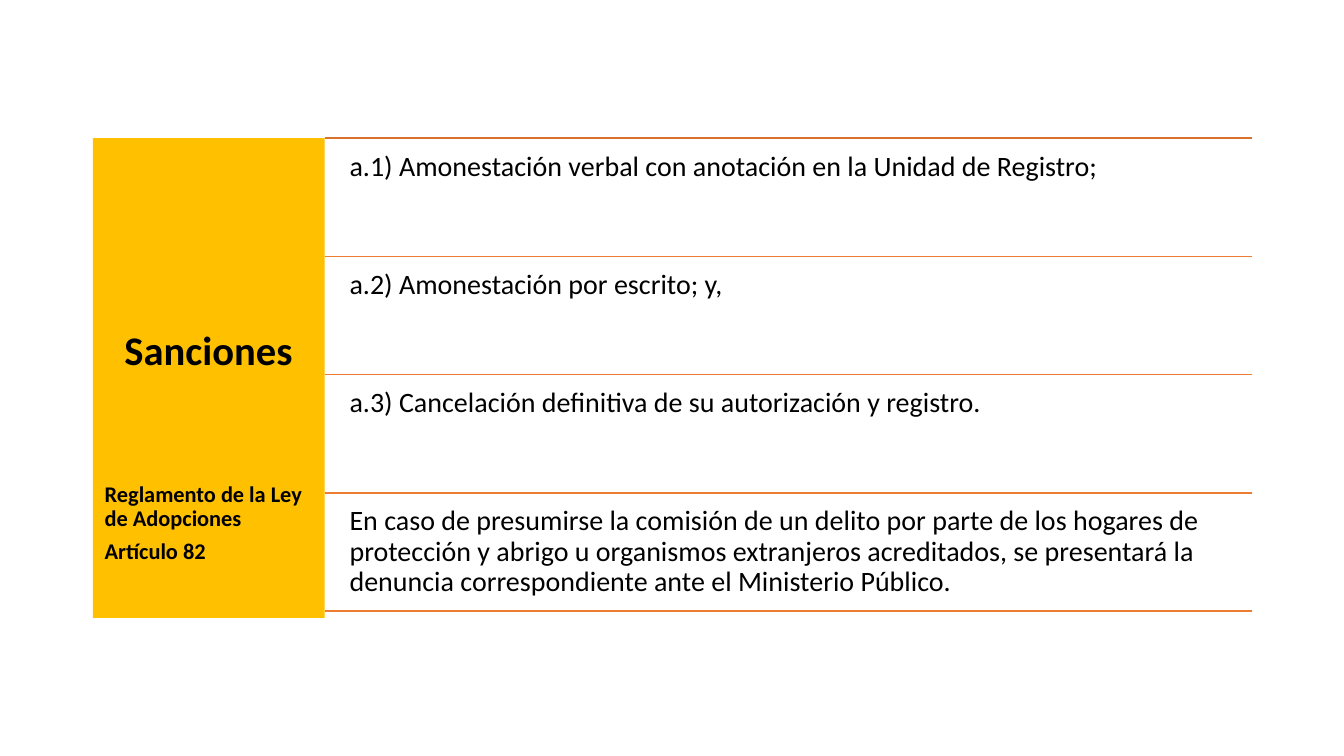
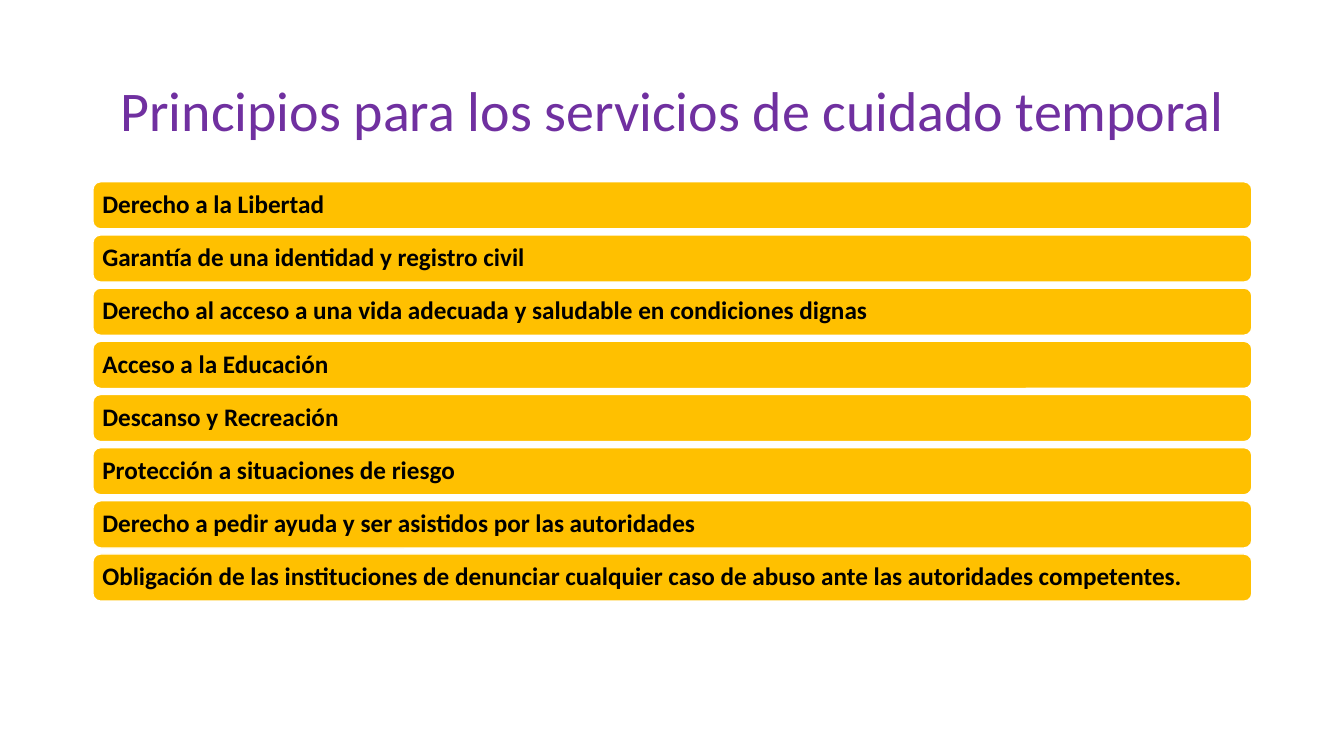
from lxml import etree
from pptx import Presentation
from pptx.dml.color import RGBColor
from pptx.enum.shapes import MSO_CONNECTOR, MSO_SHAPE
from pptx.enum.text import MSO_ANCHOR, MSO_AUTO_SIZE, PP_ALIGN
from pptx.oxml.ns import qn
from pptx.util import Cm, Pt

LEFT, CENTER = PP_ALIGN.LEFT, PP_ALIGN.CENTER
TOP, MIDDLE = MSO_ANCHOR.TOP, MSO_ANCHOR.MIDDLE
ROUND, LINE = MSO_SHAPE.ROUNDED_RECTANGLE, MSO_CONNECTOR.STRAIGHT

# Content
HEAD = "Sanciones"
LAW = ["Reglamento de la Ley de Adopciones", "Artículo 82"]
RULES = [
    "a.1) Amonestación verbal con anotación en la Unidad de Registro;",
    "a.2) Amonestación por escrito; y,",
    "a.3) Cancelación definitiva de su autorización y registro.",
    "En caso de presumirse la comisión de un delito por parte de los hogares "
    "de protección y abrigo u organismos extranjeros acreditados, se "
    "presentará la denuncia correspondiente ante el Ministerio Público.",
]
TITLE = "Principios para los servicios de cuidado temporal"
RIGHTS = [
    "Derecho a la Libertad",
    "Garantía de una identidad y registro civil",
    "Derecho al acceso a una vida adecuada y saludable en condiciones dignas",
    "Acceso a la Educación",
    "Descanso y Recreación",
    "Protección a situaciones de riesgo",
    "Derecho a pedir ayuda y ser asistidos por las autoridades",
    "Obligación de las instituciones de denunciar cualquier caso de abuso "
    "ante las autoridades competentes.",
]

# Shared style, lengths in cm
FONT = "Calibri"
COLORS = {"gold": "FFC000", "ink": "000000", "purple": "7030A0",
          "rule": "ED7D31", "edge": "D7712C", "white": "FFFFFF"}
X, WIDTH = 2.34, 29.21
SIDE, TALL, START, ROW = 5.84, 12.09, 3.48, 2.98
BAR, STEP, FIRST = 1.19, 1.34, 4.58


def color(name):
    return RGBColor.from_string(COLORS[name])


def paint(shape, fill):
    shape.fill.solid()
    shape.fill.fore_color.rgb = color(fill)


def write(shape, lines, size=20, ink="ink", bold=False, align=LEFT,
          anchor=TOP, pad=0.2, foot=None, after=0):
    frame = shape.text_frame
    frame.auto_size = MSO_AUTO_SIZE.NONE
    frame.word_wrap = True
    frame.vertical_anchor = anchor
    frame.margin_left = frame.margin_right = frame.margin_top = Cm(pad)
    frame.margin_bottom = Cm(pad if foot is None else foot)
    frame.text = "\n".join(lines)
    for para in frame.paragraphs:
        para.alignment = align
        para.line_spacing = 0.9
        para.space_before = Pt(0)
        para.space_after = Pt(after)
        font = para.font
        font.name, font.size, font.bold = FONT, Pt(size), bold
        font.color.rgb = color(ink)


def add_box(slide, lines, x, y, w, h, **form):
    box = slide.shapes.add_textbox(Cm(x), Cm(y), Cm(w), Cm(h))
    write(box, lines, **form)


def add_title(slide, text, x, y, w, h, **form):
    title = slide.shapes.title
    title.left, title.top, title.width, title.height = map(Cm, (x, y, w, h))
    write(title, [text], align=CENTER, anchor=MIDDLE, **form)
    return title


def add_rule(slide, y, ink):
    line = slide.shapes.add_connector(
        LINE, Cm(X + SIDE), Cm(y), Cm(X + WIDTH), Cm(y))
    line.line.color.rgb = color(ink)
    line.line.width = Pt(1)
    etree.SubElement(line._element.spPr, qn("a:effectLst"))


def add_bar(slide, text, y):
    bar = slide.shapes.add_shape(ROUND, Cm(X), Cm(y), Cm(WIDTH), Cm(BAR))
    bar.shadow.inherit = False
    paint(bar, "gold")
    bar.line.color.rgb = color("white")
    bar.line.width = Pt(1)
    write(bar, [text], size=18, bold=True, anchor=MIDDLE, pad=0.18)


def build_sanctions(slide):
    # Gold side panel with the law below its heading
    panel = add_title(slide, HEAD, X, START, SIDE, TALL,
                      size=29, bold=True, pad=0.3, foot=1.6)
    paint(panel, "gold")
    add_box(slide, LAW, X, 11.88, SIDE, 3, size=16, bold=True,
            pad=0.3, after=6)

    # Ruled rows
    for i in range(len(RULES) + 1):
        add_rule(slide, START + i * ROW, "rule" if i else "edge")
    for i, text in enumerate(RULES):
        add_box(slide, [text], X + SIDE + 0.43, START + 0.15 + i * ROW,
                22.94, 2.84)


def build_rights(slide):
    add_title(slide, TITLE, X, 1.02, WIDTH, 3.68, size=40, ink="purple")
    for i, text in enumerate(RIGHTS):
        add_bar(slide, text, FIRST + i * STEP)


def main():
    deck = Presentation()
    deck.slide_width, deck.slide_height = Cm(33.87), Cm(19.05)
    layout = deck.slide_layouts.get_by_name("Title Only")
    for build in (build_sanctions, build_rights):
        build(deck.slides.add_slide(layout))
    deck.save("out.pptx")


if __name__ == "__main__":
    main()
